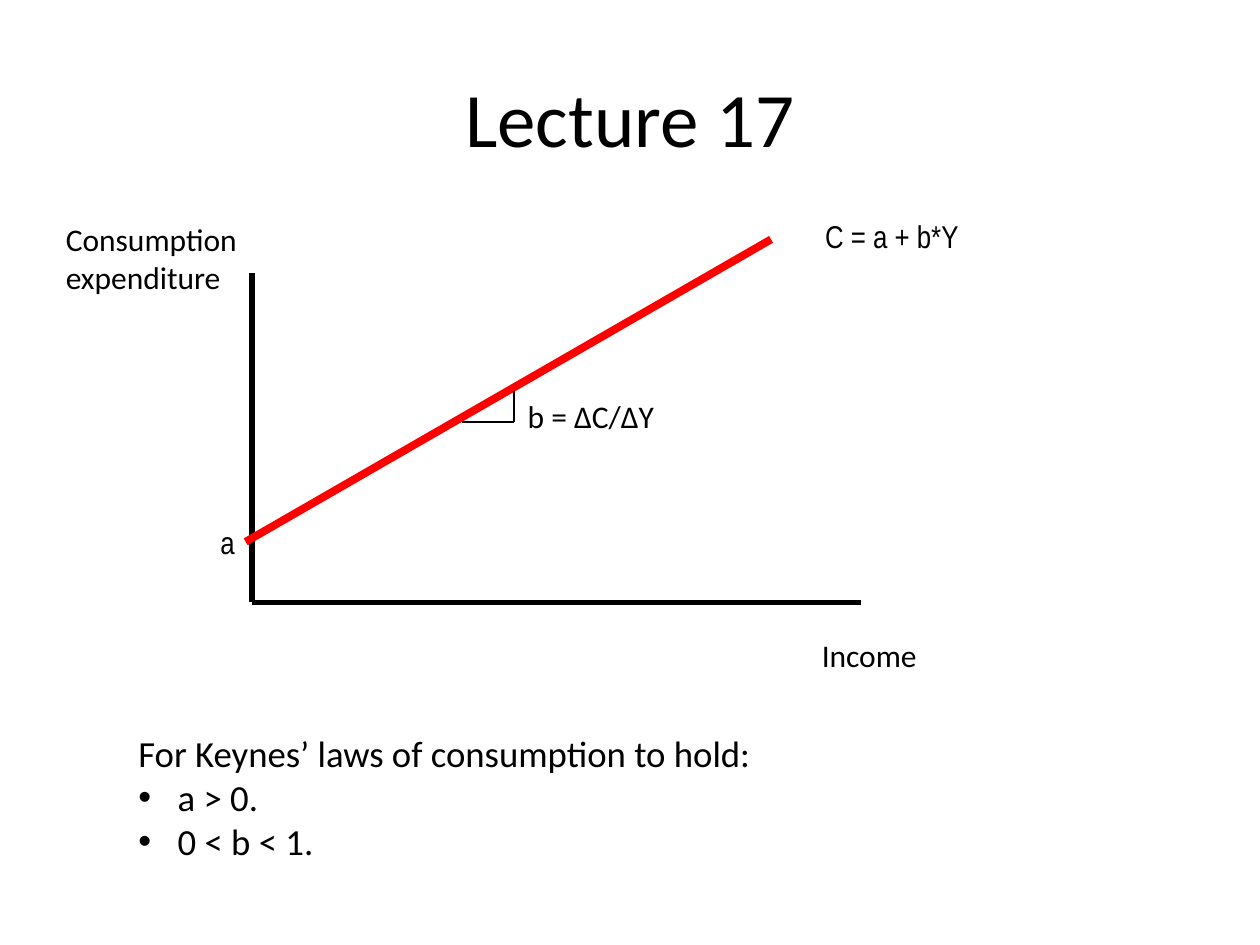
from lxml import etree
from pptx import Presentation
from pptx.dml.color import RGBColor
from pptx.enum.shapes import MSO_CONNECTOR
from pptx.enum.text import MSO_ANCHOR, PP_ALIGN
from pptx.oxml.ns import qn
from pptx.util import Pt

STRAIGHT = MSO_CONNECTOR.STRAIGHT
LEFT, CENTER, JUSTIFY = PP_ALIGN.LEFT, PP_ALIGN.CENTER, PP_ALIGN.JUSTIFY
TOP, MIDDLE = MSO_ANCHOR.TOP, MSO_ANCHOR.MIDDLE

THEME = {
    "ink": RGBColor(0, 0, 0),
    "consumption": RGBColor(255, 0, 0),
    "font": "Calibri",
    "symbol_font": "Arial Narrow",
    "title": 44,
    "label": 18,
    "body": 21,
    "axis_width": 3,
    "consumption_width": 4.5,
    "slope_width": 1,
}
BULLET_INDENT = 22.5

TITLE = "Lecture 17"
CONDITIONS = ["For Keynes’ laws of consumption to hold:", "a > 0.", "0 < b < 1."]

# text, (left, top, width, height), font
LABELS = [
    ("Consumption\vexpenditure", (30.5, 122.4, 115, 50), "font"),
    ("Income", (462.5, 360, 73, 29), "font"),
    ("a", (118.8, 295.2, 23, 29), "symbol_font"),
    ("b = ∆C/∆Y", (294.5, 223.2, 88, 29), "font"),
    ("C = a + b*Y", (464.4, 120.2, 160, 29), "symbol_font"),
]

ORIGIN = (144, 344.2)
SLOPE_CORNER = (293.8, 241.2)
# start, end, colour, width
LINES = [
    ((ORIGIN[0], 156.2), ORIGIN, "ink", "axis_width"),
    (ORIGIN, (491.8, ORIGIN[1]), "ink", "axis_width"),
    ((140.4, 309.6), (440.6, 136.8), "consumption", "consumption_width"),
    ((264.2, SLOPE_CORNER[1]), SLOPE_CORNER, "ink", "slope_width"),
    (SLOPE_CORNER, (SLOPE_CORNER[0], 223.2), "ink", "slope_width"),
]


def add_bullet(paragraph):
    properties = paragraph._p.get_or_add_pPr()
    properties.set("marL", str(Pt(BULLET_INDENT)))
    properties.set("indent", str(-Pt(BULLET_INDENT)))
    etree.SubElement(properties, qn("a:buFont")).set("typeface", "Arial")
    etree.SubElement(properties, qn("a:buChar")).set("char", "•")


def add_text(slide, paragraphs, box, *, size="label", font="font", align=LEFT,
             anchor=TOP, wrap=False, bullets_from=None):
    """Add a text box; paragraphs from index bullets_from on get bullets."""
    frame = slide.shapes.add_textbox(*map(Pt, box)).text_frame
    frame.word_wrap = wrap
    frame.vertical_anchor = anchor
    for index, text in enumerate(paragraphs):
        paragraph = frame.add_paragraph() if index else frame.paragraphs[0]
        paragraph.text = text
        paragraph.alignment = align
        if bullets_from is not None and index >= bullets_from:
            add_bullet(paragraph)
        paragraph.font.name = THEME[font]
        paragraph.font.size = Pt(THEME[size])
        paragraph.font.color.rgb = THEME["ink"]


def add_line(slide, start, end, color, width):
    line = slide.shapes.add_connector(STRAIGHT, *map(Pt, start + end))
    line.line.color.rgb = THEME[color]
    line.line.width = Pt(THEME[width])
    etree.SubElement(line._element.spPr, qn("a:effectLst"))


def main():
    deck = Presentation()
    deck.slide_width, deck.slide_height = Pt(720), Pt(540)
    slide = deck.slides.add_slide(deck.slide_layouts[6])

    add_text(slide, [TITLE], (36, 21.6, 648, 90), size="title",
             align=CENTER, anchor=MIDDLE, wrap=True)
    for line in LINES:
        add_line(slide, *line)
    for text, box, font in LABELS:
        add_text(slide, [text], box, font=font)
    add_text(slide, CONDITIONS, (72, 414, 504, 83.5), size="body",
             align=JUSTIFY, wrap=True, bullets_from=1)

    deck.save("out.pptx")


if __name__ == "__main__":
    main()
